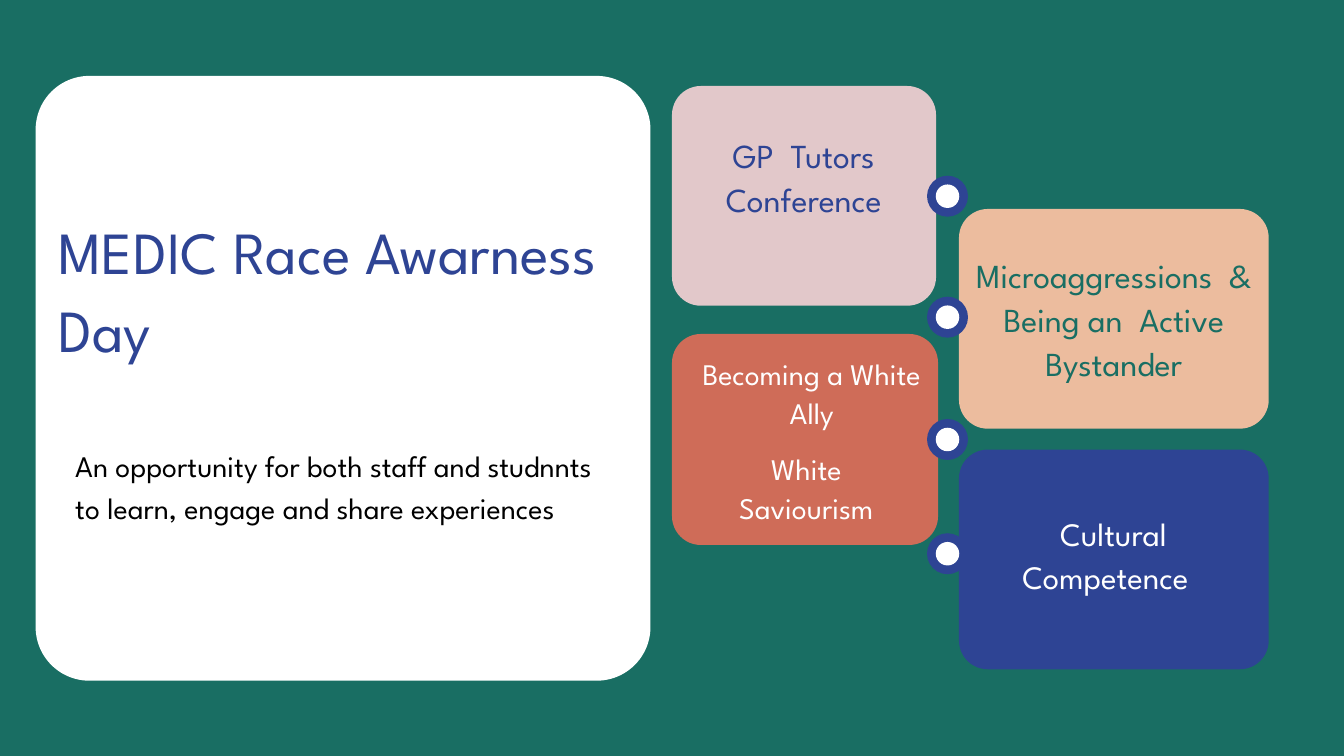
from pptx import Presentation
from pptx.dml.color import RGBColor
from pptx.enum.shapes import MSO_SHAPE as Shape
from pptx.enum.text import MSO_ANCHOR as Anchor, PP_ALIGN as Align
from pptx.util import Inches, Pt

FONT = "League Spartan"
GREEN, BLUE, WHITE, BLACK = "196E63", "2E4494", "FFFFFF", "000000"
PINK, PEACH, CORAL = "E2C8CA", "ECBC9E", "CF6C58"

# Left, top, width, height, colour
CARDS = [
    (14.27, 6.69, 4.61, 3.27, BLUE),
    (10, 1.28, 3.93, 3.27, PINK),
    (14.27, 3.11, 4.61, 3.27, PEACH),
    (10, 4.97, 3.96, 3.14, CORAL),
]
DOT_CENTER_X = 14.1
DOT_CENTERS_Y = [2.92, 4.72, 6.54, 8.24]

# Text, left, top, width, height, size, line spacing, colour
CARD_LABELS = [
    ("GP  Tutors Conference", 10.36, 1.96, 3.2, 1.27, 36, 46.8, BLUE),
    ("Becoming a White Ally", 10.2, 5.25, 3.76, 1.13, 32, 41.6, WHITE),
    ("White Saviourism", 10.43, 6.66, 3.14, 1.13, 32, 41.6, WHITE),
    ("Microaggressions  & Being an  Active Bystander",
     14.27, 3.75, 4.61, 1.92, 36, 46.8, GREEN),
    ("Cultural Competence  ", 14.57, 7.6, 4, 1.23, 35, 45.5, WHITE),
]
PANEL_TEXTS = [
    ("MEDIC Race Awarness Day", 0.87, 3.11, 8.31, 2.26, 64, 83.2, BLUE),
    ("An opportunity for both staff and studnnts to learn, engage and share experiences",
     1.12, 6.57, 8.06, 1.79, 32, 44.8, BLACK),
]


def set_fill(fill, color):
    fill.solid()
    fill.fore_color.rgb = RGBColor.from_string(color)


def add_plain_shape(slide, kind, left, top, width, height, color):
    shape = slide.shapes.add_shape(
        kind, Inches(left), Inches(top), Inches(width), Inches(height))
    shape.shadow.inherit = False
    set_fill(shape.fill, color)
    shape.line.fill.background()
    return shape


def add_card(slide, left, top, width, height, color, radius=0.43):
    card = add_plain_shape(
        slide, Shape.ROUNDED_RECTANGLE, left, top, width, height, color)
    card.adjustments[0] = radius / min(width, height)


def add_dot(slide, center_y):
    for diameter, color in ((0.61, BLUE), (0.35, WHITE)):
        add_plain_shape(slide, Shape.OVAL, DOT_CENTER_X - diameter / 2,
                        center_y - diameter / 2, diameter, diameter, color)


def add_text(slide, text, left, top, width, height, size, spacing, color, align):
    box = slide.shapes.add_textbox(
        Inches(left), Inches(top), Inches(width), Inches(height))
    text_frame = box.text_frame
    text_frame.word_wrap = True
    text_frame.vertical_anchor = Anchor.TOP
    text_frame.margin_left = text_frame.margin_right = 0
    text_frame.margin_top = text_frame.margin_bottom = 0
    text_frame.text = text
    paragraph = text_frame.paragraphs[0]
    paragraph.alignment = align
    paragraph.line_spacing = Pt(spacing)
    font = paragraph.runs[0].font
    font.name = FONT
    font.size = Pt(size)
    font.color.rgb = RGBColor.from_string(color)


def main():
    presentation = Presentation()
    presentation.slide_width = Inches(20)
    presentation.slide_height = Inches(11.25)
    slide = presentation.slides.add_slide(presentation.slide_layouts[6])
    set_fill(slide.background.fill, GREEN)

    # Topic cards and the dots between them
    for card in CARDS:
        add_card(slide, *card)
    for center_y in DOT_CENTERS_Y:
        add_dot(slide, center_y)
    for label in CARD_LABELS:
        add_text(slide, *label, Align.CENTER)

    # Title panel
    add_card(slide, 0.53, 1.13, 9.15, 9, WHITE, radius=0.8)
    for panel_text in PANEL_TEXTS:
        add_text(slide, *panel_text, Align.LEFT)

    presentation.save("out.pptx")


if __name__ == "__main__":
    main()
